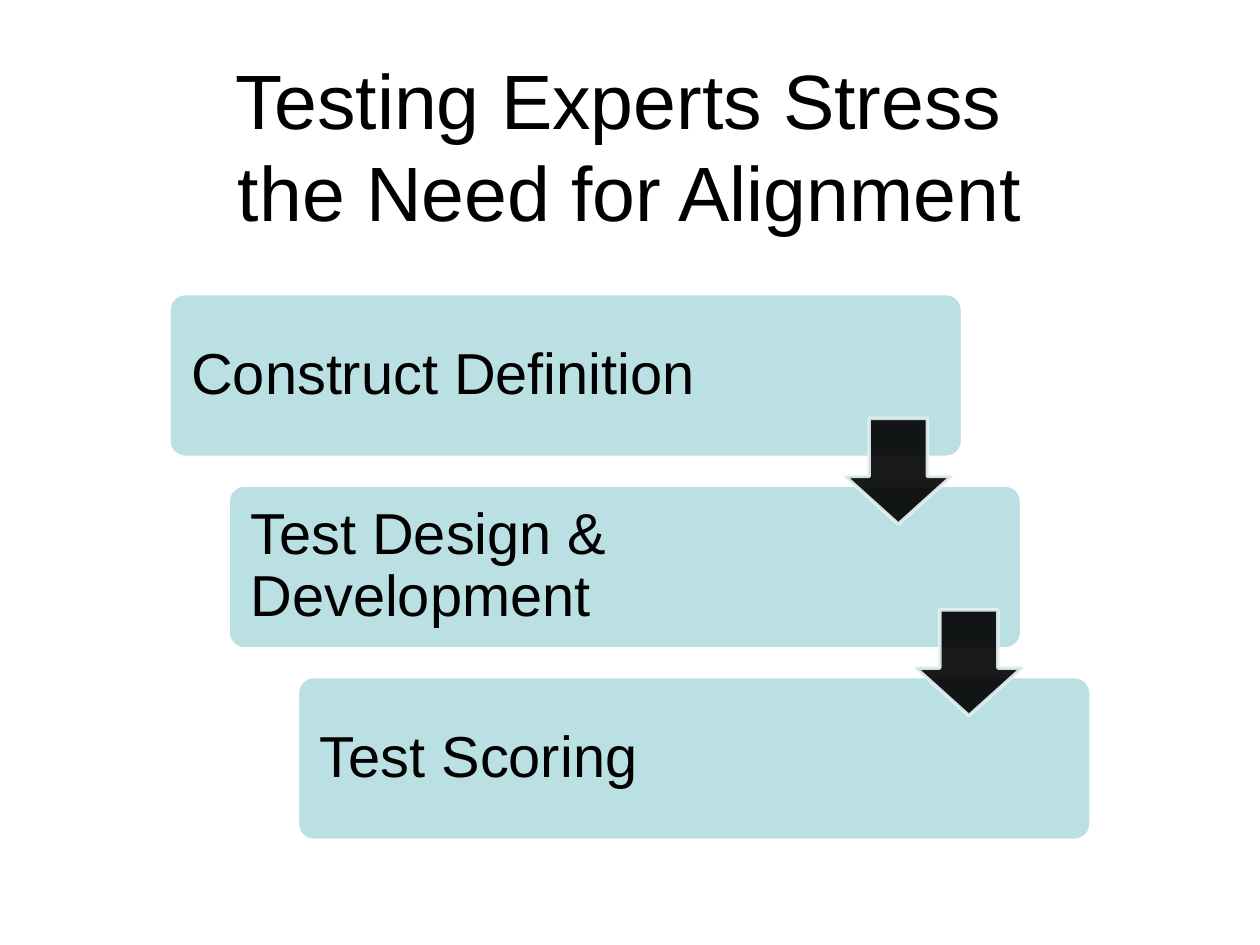
from lxml.etree import SubElement
from pptx import Presentation
from pptx.dml.color import RGBColor
from pptx.enum.shapes import MSO_SHAPE
from pptx.enum.text import MSO_ANCHOR, MSO_AUTO_SIZE, PP_ALIGN
from pptx.oxml.ns import qn
from pptx.util import Inches, Pt

BLACK = RGBColor(0x00, 0x00, 0x00)
WHITE = RGBColor(0xFF, 0xFF, 0xFF)
AQUA = RGBColor(0xBB, 0xE0, 0xE3)
PALE = RGBColor(0xE7, 0xF3, 0xF4)

COLS, ROWS = 100, 75  # grid over the whole slide
STEPS = ["Construct Definition", "Test Design & Development", "Test Scoring"]
LEFTS = [13.4, 18.1, 23.6]
TOP, PITCH = 23.3, 15.2


def write(frame, text, size=33, color=BLACK, font="Arial",
          align=PP_ALIGN.LEFT, gap=None, after=None):
    frame.text = text
    frame.word_wrap = True
    frame.auto_size = MSO_AUTO_SIZE.NONE
    frame.vertical_anchor = MSO_ANCHOR.MIDDLE
    for para in frame.paragraphs:
        para.alignment = align
        para.line_spacing = gap
        para.space_after = after
        for run in para.runs:
            run.font.size = Pt(size)
            run.font.name = font
            run.font.color.rgb = color


def fade(fill, share):
    """Set the opacity of a solid fill element."""
    for color in fill.iter(qn("a:srgbClr")):
        SubElement(color, qn("a:alpha")).set("val", str(int(share * 100000)))


class Deck:
    def __init__(self):
        self.file = Presentation()
        self.file.slide_width, self.file.slide_height = Inches(10), Inches(7.5)
        self.slide = self.file.slides.add_slide(self.file.slide_layouts[5])

    def area(self, col, row, wide, high):
        unit_x = self.file.slide_width / COLS
        unit_y = self.file.slide_height / ROWS
        return (int(col * unit_x), int(row * unit_y),
                int(wide * unit_x), int(high * unit_y))

    def title(self, text, *place):
        shape = self.slide.shapes.title
        shape.left, shape.top, shape.width, shape.height = self.area(*place)
        write(shape.text_frame, text, size=44, align=PP_ALIGN.CENTER)

    def shape(self, kind, place, fill, line, tweaks):
        shape = self.slide.shapes.add_shape(kind, *self.area(*place))
        shape.shadow.inherit = False
        shape.fill.solid()
        shape.fill.fore_color.rgb = fill
        shape.line.color.rgb = line
        shape.line.width = Pt(2)
        for i, value in enumerate(tweaks):
            shape.adjustments[i] = value
        return shape

    def step(self, text, col, row):
        box = self.shape(MSO_SHAPE.ROUNDED_RECTANGLE, (col, row, 63, 13),
                         AQUA, WHITE, [0.1])
        frame = box.text_frame
        frame.margin_left = frame.margin_top = frame.margin_bottom = Inches(0.14)
        frame.margin_right = Inches(1.53)  # room for the arrow
        write(frame, text, gap=0.9, after=Pt(11.5))

    def arrow(self, col, row):
        arrow = self.shape(MSO_SHAPE.DOWN_ARROW, (col, row, 8.4, 8.4),
                           BLACK, PALE, [0.55, 0.45])
        fade(arrow.element.spPr, 0.9)


def main():
    deck = Deck()
    deck.title("Testing Experts Stress \vthe Need for Alignment", 5, 3, 90, 17)

    # Staggered steps
    for i, (text, left) in enumerate(zip(STEPS, LEFTS)):
        deck.step(text, left, TOP + i * PITCH)

    # Arrows from each step to the next
    for i, left in enumerate([67.1, 72.7]):
        deck.arrow(left, TOP + 9.9 + i * PITCH)

    deck.file.save("out.pptx")


if __name__ == "__main__":
    main()
